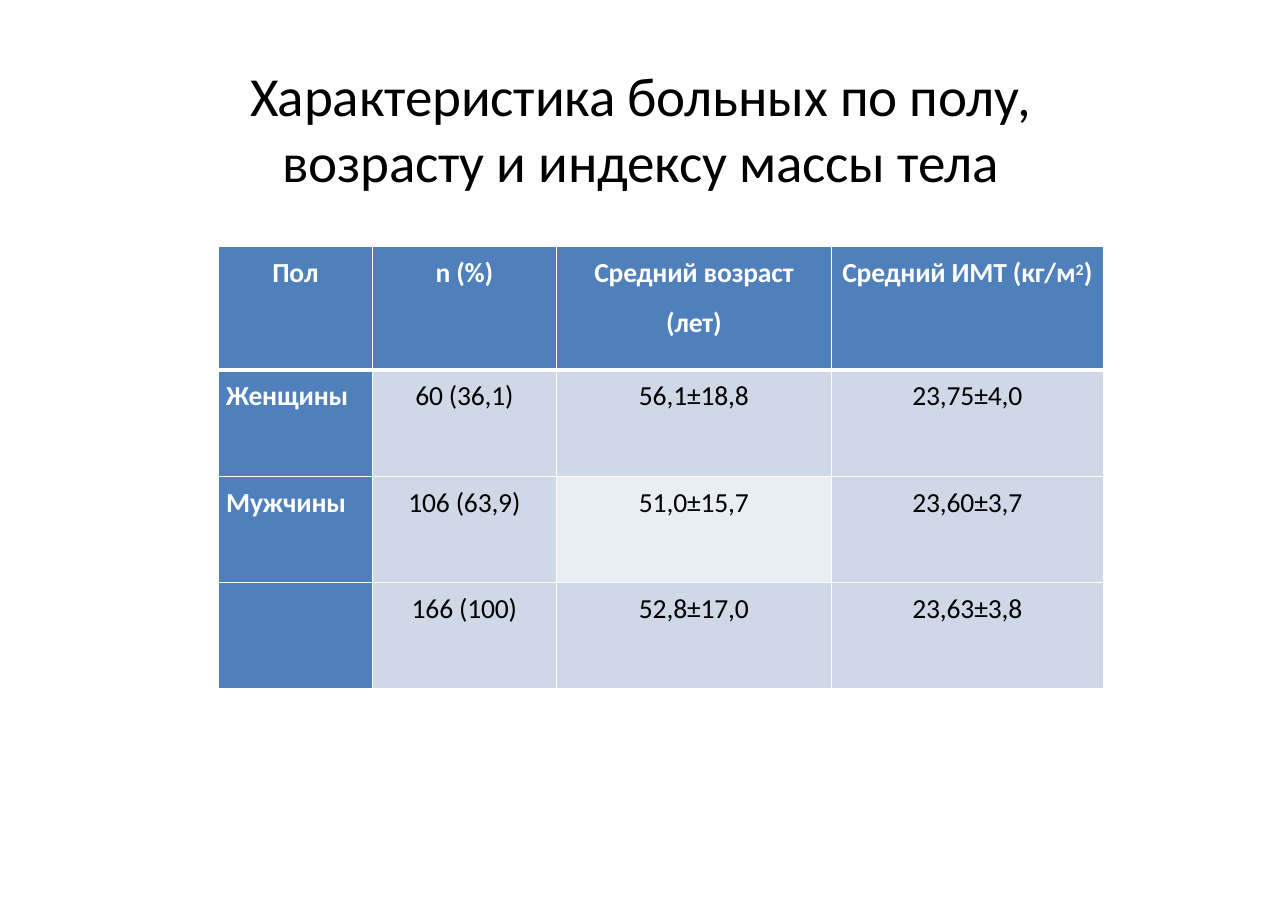
from lxml.etree import SubElement
from pptx import Presentation
from pptx.dml.color import RGBColor
from pptx.enum.text import MSO_ANCHOR as Anchor, MSO_AUTO_SIZE as Fit, PP_ALIGN as Align
from pptx.oxml.ns import qn
from pptx.util import Pt

TITLE = "Характеристика больных по полу, возрасту и индексу массы тела"
ROWS = [
    ["Пол", "n (%)", "Средний возраст\n(лет)", "Средний ИМТ (кг/м^2^)"],
    ["Женщины", "60 (36,1)", "56,1±18,8", "23,75±4,0"],
    ["Мужчины", "106 (63,9)", "51,0±15,7", "23,60±3,7"],
    ["", "166 (100)", "52,8±17,0", "23,63±3,8"],
]
WIDTHS = [100.6, 120.2, 179.8, 177.6]
HEIGHTS = [81, 69.4, 69.4, 69.4]
WHITE, BLACK = "FFFFFF", "000000"
BLUE, PALE, LIGHT = "4F80BC", "D0D8E8", "E9EDF4"


def color(code):
    return RGBColor.from_string(code)


def write(para, text, size, ink, bold=False):
    font = para.font
    font.name, font.size, font.bold = "Calibri", Pt(size), bold
    font.color.rgb = color(ink)
    for i, part in enumerate(text.split("^")):
        if part:
            run = para.add_run()
            run.text = part
            props = run._r.get_or_add_rPr()
            props.set("spc", "-10")
            if i % 2:
                props.set("baseline", "25000")


def add_title(slide):
    title = slide.shapes.title
    title.left, title.top = Pt(137.5), Pt(38.9)
    title.width, title.height = Pt(566.6), Pt(106.6)
    frame = title.text_frame
    frame.margin_left = frame.margin_right = frame.margin_bottom = 0
    frame.margin_top = Pt(1)
    frame.vertical_anchor = Anchor.TOP
    frame.word_wrap = True
    frame.auto_size = Fit.SHAPE_TO_FIT_TEXT
    para = frame.paragraphs[0]
    para.alignment = Align.LEFT
    para.space_before = Pt(1)
    props = para._p.get_or_add_pPr()
    props.set("marL", str(Pt(46.8)))
    props.set("indent", str(Pt(-20.9)))
    write(para, TITLE, 36, BLACK)


def add_edge(cell, side, width):
    props = cell._tc.get_or_add_tcPr()
    line = SubElement(props, qn(f"a:ln{side}"), w=str(Pt(width)))
    fill = SubElement(line, qn("a:solidFill"))
    SubElement(fill, qn("a:srgbClr"), val=WHITE)


def fill_cell(cell, text, row, col):
    head = row == 0 or col == 0
    cell.margin_left = cell.margin_right = cell.margin_bottom = 0
    cell.margin_top = Pt(6.3)
    cell.vertical_anchor = Anchor.TOP
    for side in "LRTB":
        thick = (row, side) in [(0, "B"), (1, "T")]
        add_edge(cell, side, 3 if thick else 1)
    cell.fill.solid()
    back = BLUE if head else LIGHT if (row, col) == (2, 2) else PALE
    cell.fill.fore_color.rgb = color(back)
    frame = cell.text_frame
    for i, line in enumerate(text.split("\n")):
        para = frame.add_paragraph() if i else frame.paragraphs[0]
        para.space_before = Pt(10.8 if i else 6.3)
        para.alignment = Align.CENTER
        if row and col == 0:
            para.alignment = Align.LEFT
            para._p.get_or_add_pPr().set("marL", str(Pt(5)))
        write(para, line, 18, WHITE if head else BLACK, head)


def add_grid(slide):
    frame = slide.shapes.add_table(
        len(ROWS), len(WIDTHS), Pt(142.8), Pt(160.9),
        Pt(sum(WIDTHS)), Pt(sum(HEIGHTS)))
    table = frame.table
    table.horz_banding = False
    for col, width in zip(table.columns, WIDTHS):
        col.width = Pt(width)
    for row, height in zip(table.rows, HEIGHTS):
        row.height = Pt(height)
    for r, texts in enumerate(ROWS):
        for c, text in enumerate(texts):
            fill_cell(table.cell(r, c), text, r, c)


def main():
    deck = Presentation()
    deck.slide_width, deck.slide_height = Pt(841.7), Pt(594.7)
    slide = deck.slides.add_slide(deck.slide_layouts[5])
    add_title(slide)
    add_grid(slide)
    deck.save("out.pptx")


if __name__ == "__main__":
    main()
